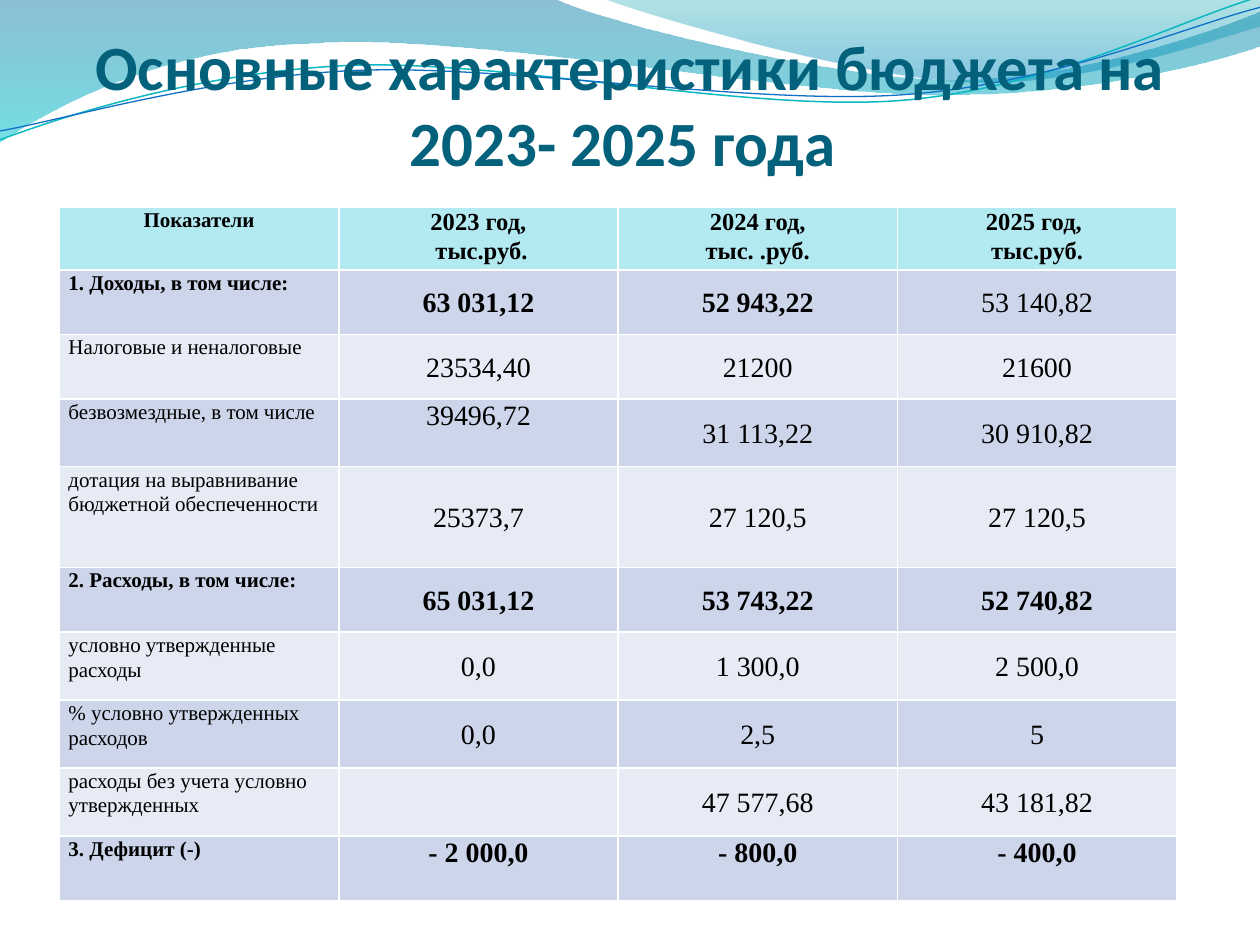
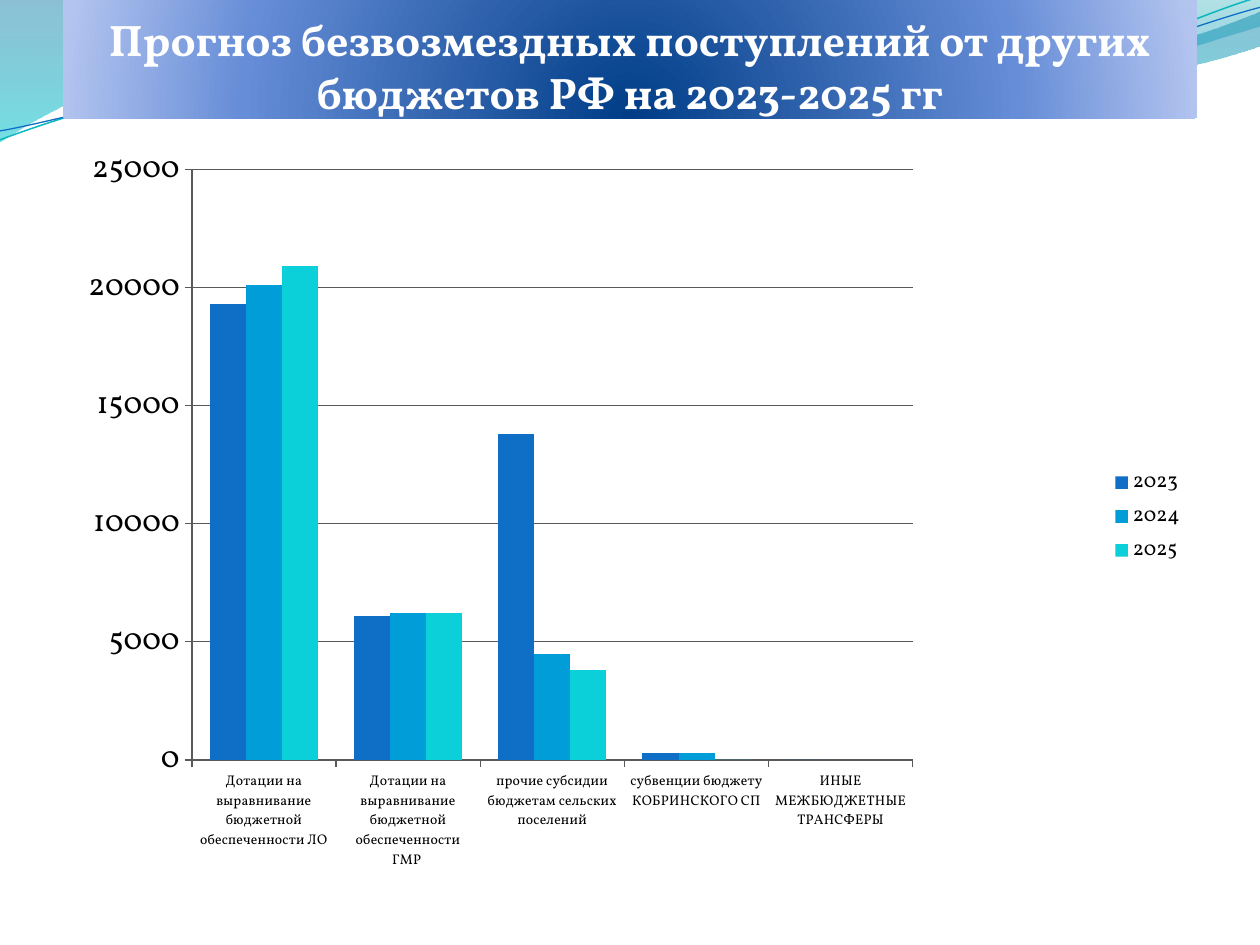
from lxml import etree
from pptx import Presentation
from pptx import util as u
from pptx.chart import data as chart_data
from pptx.dml import color
from pptx.enum import chart as ch, shapes, text
from pptx.oxml import ns, parse_xml

Cm, Pt = u.Cm, u.Pt

# Shared look
WHITE, BLACK, TEAL, AXIS_GREY = "FFFFFF", "000000", "04617B", "595959"
HEADER_FILL, BAND_FILLS = "B3EAF2", ("CCD5EA", "E7EBF5")
SERIES_COLOURS = ("0F6FC6", "009DD9", "0BD0D9")
TITLE_BOX_LEFT, TITLE_BOX_WIDTH = Cm(1.27), Cm(22.86)
DOWNWARD = '<a:lin ang="5400000" scaled="0"/>'
GLOW = ('<a:path path="circle">'
        '<a:fillToRect l="50000" t="130000" r="50000" b="-30000"/></a:path>')

# Waves at the top, in cm: a pair is a straight step, six numbers a curve
LARGE_WAVE = [(0, 0), (11.18, -.03), (12.09, .43, 16.87, 1.6, 19.25, 1.6),
              (21.67, 1.6, 24.33, .66, 25.4, .23), (25.43, .91),
              (24.97, 1.12, 22.1, 1.93, 18.95, 1.91),
              (15.8, 1.91, 9.7, .71, 6.53, .86),
              (3.28, .91, 1.17, 2.11, -.03, 2.87)]
SMALL_WAVE = [(12.17, -.03), (12.93, .28, 17.32, 1.57, 19.53, 1.65),
              (21.74, 1.75, 24.41, .81, 25.4, .53), (25.4, 0)]
TEAL_LINE = [(0, 2.82), (1.22, 2.36, 4.01, 1.45, 7.04, 1.32),
             (10.03, 1.19, 15.06, 2.26, 18.11, 2.03),
             (21.16, 1.8, 23.83, .38, 25.35, -.05)]
BLUE_LINE = [(0, 2.64), (1.19, 2.44, 4.17, 1.55, 7.19, 1.42),
             (10.24, 1.3, 15.16, 2.13, 18.21, 1.91),
             (21.23, 1.7, 23.9, .53, 25.4, .15)]

# Budget table
COLUMN_WIDTH = Cm(5.63)
ROW_HEIGHTS = (.97, 1.3, 1.3, 1.37, 2.03, 1.3, 1.37, 1.37, 1.37, 1.3)
BUDGET = [
    ("Показатели", "2023 год,\n тыс.руб.", "2024 год,\nтыс. .руб.",
     "2025 год, \nтыс.руб."),
    ("1. Доходы, в том числе:", "63 031,12", "52 943,22", "53 140,82"),
    ("Налоговые и неналоговые", "23534,40", "21200", "21600"),
    ("безвозмездные, в том числе", "39496,72", "31 113,22", "30 910,82"),
    ("дотация на выравнивание бюджетной обеспеченности", "25373,7",
     "27 120,5", "27 120,5"),
    ("2. Расходы, в том числе:", "65 031,12", "53 743,22", "52 740,82"),
    ("условно утвержденные расходы", "0,0", "1 300,0", "2 500,0"),
    ("% условно утвержденных расходов", "0,0", "2,5", "5"),
    ("расходы без учета условно утвержденных", "", "47 577,68", "43 181,82"),
    ("3. Дефицит (-)", "- 2 000,0", "- 800,0", "- 400,0"),
]
TOTAL_ROWS, DEFICIT_ROW = (0, 1, 5, 9), 9
PLAIN_TOTAL, RAISED_VALUE = (1, 3), (3, 1)

# Transfers forecast
TRANSFERS = ["Дотации на выравнивание бюджетной обеспеченности ЛО",
             "Дотации на выравнивание бюджетной обеспеченности ГМР ",
             "прочие субсидии бюджетам сельских поселений",
             "субвенции бюджету КОБРИНСКОГО СП",
             "ИНЫЕ МЕЖБЮДЖЕТНЫЕ ТРАНСФЕРЫ"]
FORECAST = {"2023": (19300, 6100, 13800, 300, 0),
            "2024": (20100, 6200, 4500, 300, None),
            "2025": (20900, 6200, 3800, 0, None)}


def rgb(hex_code):
    return color.RGBColor.from_string(hex_code)


def style_font(font, size, name, hex_code=BLACK, bold=False):
    font.size, font.name, font.bold = Pt(size), name, bold
    font.color.rgb = rgb(hex_code)


def set_gradient(shape, stops, direction):
    """Fill with (position %, colour, opacity %) stops."""
    marks = "".join(
        f'<a:gs pos="{place * 1000}"><a:srgbClr val="{hex_code}">'
        f'<a:alpha val="{opacity * 1000}"/></a:srgbClr></a:gs>'
        for place, hex_code, opacity in stops)
    shape.fill.background()
    blank_fill = shape._element.spPr.find(ns.qn("a:noFill"))
    gradient = parse_xml(f'<a:gradFill {ns.nsdecls("a")} rotWithShape="1">'
                         f'<a:gsLst>{marks}</a:gsLst>{direction}</a:gradFill>')
    blank_fill.getparent().replace(blank_fill, gradient)


def add_outline(slide, outline, closed):
    """Draw through all points, then join each curve's three into one Bézier."""
    points = [(Cm(step[i]), Cm(step[i + 1]))
              for step in outline for i in range(0, len(step), 2)]
    builder = slide.shapes.build_freeform(*points[0])
    builder.add_line_segments(points[1:], close=closed)
    shape = builder.convert_to_shape()
    shape.shadow.inherit = False
    strokes = iter(list(shape._element.spPr.iter(ns.qn("a:lnTo"))))
    for step in outline[1:]:
        first = next(strokes)
        if len(step) == 6:
            curve = etree.Element(ns.qn("a:cubicBezTo"))
            first.addprevious(curve)
            for stroke in (first, next(strokes), next(strokes)):
                curve.append(stroke[0])
                stroke.getparent().remove(stroke)
    return shape


def add_waves(slide):
    for outline, stops in (
            (LARGE_WAVE, [(0, "0074A1", 45), (100, "00C6CF", 55)]),
            (SMALL_WAVE, [(0, "00A1A9", 30), (80, "008BBF", 45)])):
        wave = add_outline(slide, outline, True)
        set_gradient(wave, stops, DOWNWARD)
        wave.line.fill.background()
    for outline, hex_code, width in ((TEAL_LINE, "0AB8BF", .85),
                                     (BLUE_LINE, "0F6FC6", .75)):
        thread = add_outline(slide, outline, False)
        thread.fill.background()
        thread.line.color.rgb = rgb(hex_code)
        thread.line.width = Pt(width)


def set_title(shape, words, size, font_name, hex_code):
    frame = shape.text_frame
    frame.word_wrap = True
    frame.vertical_anchor = text.MSO_ANCHOR.BOTTOM
    frame.margin_left = frame.margin_right = frame.margin_bottom = 0
    frame.margin_top = Cm(.13)
    frame.text = words
    line = frame.paragraphs[0]
    line.alignment = text.PP_ALIGN.CENTER
    for run in line.runs:
        style_font(run.font, size, font_name, hex_code, True)
    # The line after a closing break takes its height from here
    etree.SubElement(line._p, ns.qn("a:endParaRPr"), sz=str(round(size * 100)))


def add_title_band(slide, words):
    band = slide.shapes.add_shape(shapes.MSO_SHAPE.RECTANGLE, TITLE_BOX_LEFT, 0,
                                  TITLE_BOX_WIDTH, Cm(2.39))
    set_gradient(band, [(0, "003D87", 100), (68, "668DD7", 100),
                        (100, "B3C4EF", 100)], GLOW)
    band.line.fill.background()
    band.shadow.inherit = False
    set_title(band, words, 25.2, "Vollkorn", WHITE)


def fill_cell(cell, row, col, words):
    cell.fill.solid()
    cell.fill.fore_color.rgb = rgb(BAND_FILLS[(row - 1) % 2] if row else HEADER_FILL)
    cell.margin_left = cell.margin_right = Cm(.18)
    cell.margin_top = cell.margin_bottom = 0
    at_top = row in (0, DEFICIT_ROW) or col == 0 or (row, col) == RAISED_VALUE
    cell.vertical_anchor = text.MSO_ANCHOR.TOP if at_top else text.MSO_ANCHOR.MIDDLE
    size = 12 if col == 0 else 16 if row else 14
    bold = row in TOTAL_ROWS and (row, col) != PLAIN_TOTAL
    cell.text_frame.text = words
    for line in cell.text_frame.paragraphs:
        line.line_spacing = 1.07
        if row == 0 or col:
            line.alignment = text.PP_ALIGN.CENTER
        for run in line.runs:
            style_font(run.font, size, "Times New Roman", BLACK, bold)


def add_budget_table(slide):
    height = Cm(13.8)
    frame = slide.shapes.add_table(len(BUDGET), len(BUDGET[0]), Cm(1.2), Cm(4.17),
                                   COLUMN_WIDTH * len(BUDGET[0]), height)
    for row, (entries, row_height) in enumerate(zip(BUDGET, ROW_HEIGHTS)):
        frame.table.rows[row].height = Cm(row_height)
        for col, words in enumerate(entries):
            fill_cell(frame.table.cell(row, col), row, col, words)
    frame.height = height


def place_plot(chart, x, y, w, h):
    """Pin the inner plot area, in shares of the chart."""
    plot_area = chart._chartSpace.chart.plotArea
    for found in plot_area.findall(ns.qn("c:layout")):
        plot_area.remove(found)
    sizes = "".join(f'<c:{tag} val="{share}"/>'
                    for tag, share in zip("xywh", (x, y, w, h)))
    plot_area.insert(0, parse_xml(
        f'<c:layout {ns.nsdecls("c")}><c:manualLayout>'
        '<c:layoutTarget val="inner"/><c:xMode val="edge"/><c:yMode val="edge"/>'
        f'{sizes}</c:manualLayout></c:layout>'))


def add_forecast_chart(slide):
    figures = chart_data.CategoryChartData()
    figures.categories = TRANSFERS
    for year, values in FORECAST.items():
        figures.add_series(year, values)
    chart = slide.shapes.add_chart(ch.XL_CHART_TYPE.COLUMN_CLUSTERED, Cm(1.78),
                                   Cm(2.97), Cm(22.35), Cm(14.88), figures).chart
    chart.has_title = False
    style_font(chart.font, 18, "Vollkorn")
    place_plot(chart, .08, .03, .66, .8)

    columns = chart.plots[0]
    columns.gap_width, columns.overlap, columns.vary_by_categories = 100, 0, False
    for series, hex_code in zip(columns.series, SERIES_COLOURS):
        series.format.fill.solid()
        series.format.fill.fore_color.rgb = rgb(hex_code)

    amounts = chart.value_axis
    amounts.minimum_scale, amounts.maximum_scale, amounts.major_unit = 0, 25000, 5000
    amounts.has_major_gridlines = True
    for axis, size in ((chart.category_axis, 8), (amounts, 18)):
        axis.major_tick_mark = ch.XL_TICK_MARK.OUTSIDE
        style_font(axis.tick_labels.font, size, "Vollkorn")
    for rule in (chart.category_axis, amounts, amounts.major_gridlines):
        rule.format.line.color.rgb = rgb(AXIS_GREY)

    chart.has_legend = True
    chart.legend.position = ch.XL_LEGEND_POSITION.RIGHT
    chart.legend.include_in_layout = False
    style_font(chart.legend.font, 12, "Vollkorn")


def main():
    deck = Presentation()
    deck.slide_width, deck.slide_height = Cm(25.4), Cm(19.05)
    budget_slide, forecast_slide = (deck.slides.add_slide(deck.slide_layouts[6])
                                    for _ in range(2))
    for slide in (budget_slide, forecast_slide):
        add_waves(slide)

    # Budget figures
    heading = budget_slide.shapes.add_textbox(TITLE_BOX_LEFT, Cm(1.96),
                                              TITLE_BOX_WIDTH, Cm(3.17))
    set_title(heading, "Основные характеристики бюджета на 2023- 2025 года \v",
              36, "Calibri", TEAL)
    add_budget_table(budget_slide)

    # Forecast of transfers
    add_title_band(forecast_slide, "Прогноз безвозмездных поступлений от других "
                                   "бюджетов РФ на 2023-2025 гг")
    add_forecast_chart(forecast_slide)

    deck.save("out.pptx")


if __name__ == "__main__":
    main()
